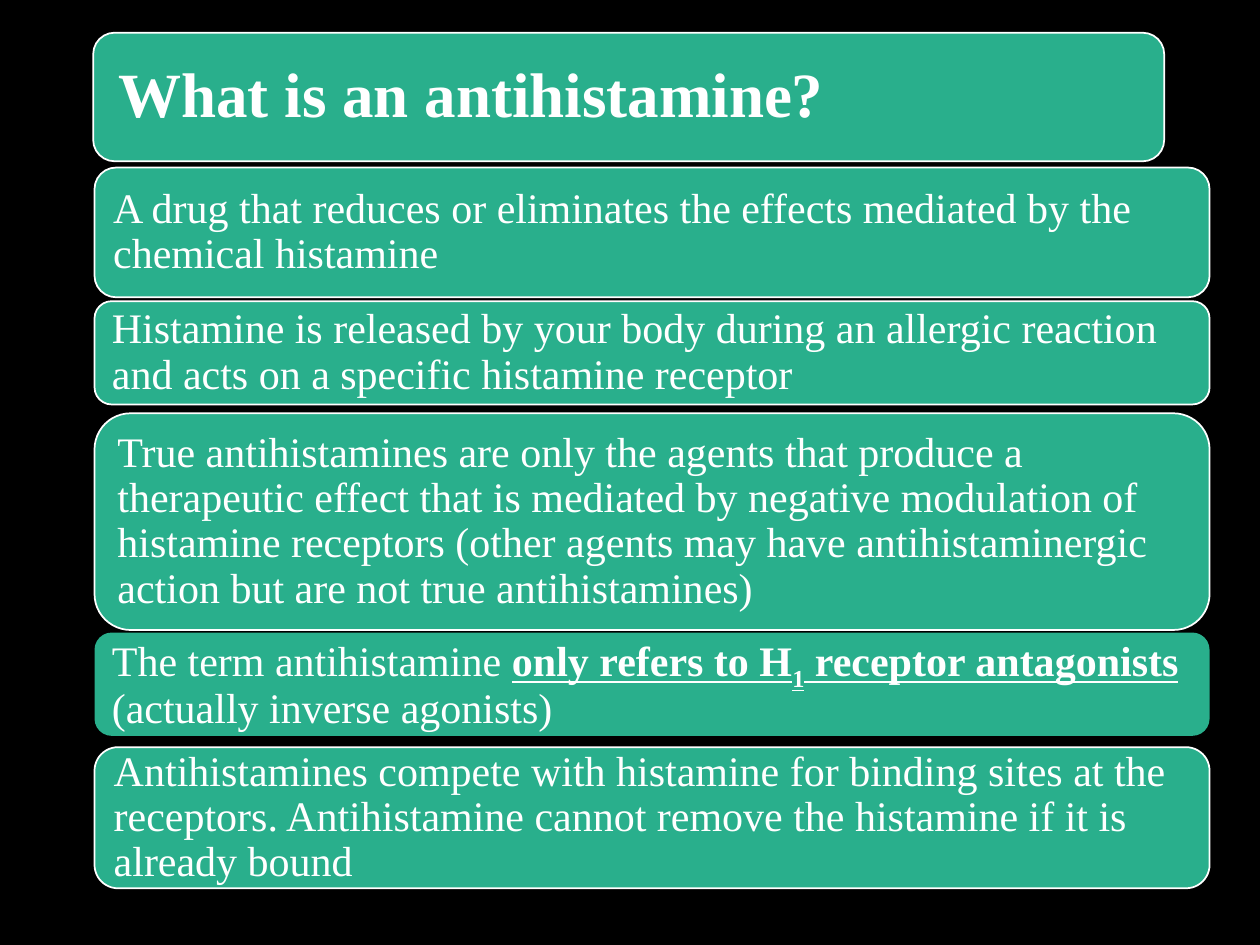
from pptx import Presentation
from pptx.dml.color import RGBColor
from pptx.enum.shapes import MSO_SHAPE
from pptx.enum.text import MSO_ANCHOR, MSO_AUTO_SIZE, PP_ALIGN
from pptx.util import Inches, Pt

ROUNDED = MSO_SHAPE.ROUNDED_RECTANGLE
MIDDLE = MSO_ANCHOR.MIDDLE
LEFT = PP_ALIGN.LEFT
NO_AUTOFIT = MSO_AUTO_SIZE.NONE

COLORS = {"background": "000000", "card": "29AF8C", "text": "FFFFFF", "outline": "FFFFFF"}
FONT = "Times New Roman"
TITLE_ONLY_LAYOUT = 5
CARD_LEFT, CARD_WIDTH = 0.75, 8.85

# Each card: top, height, outlined, runs of (text, styles)
CARDS = [
    (1.33, 1.03, True, [
        ("A drug that reduces or eliminates the effects mediated by the chemical histamine", ""),
    ]),
    (2.39, 0.82, True, [
        ("Histamine is released by your body during an allergic reaction and acts on a "
         "specific histamine receptor", ""),
    ]),
    (3.28, 1.72, True, [
        ("True antihistamines are only the agents that produce a therapeutic effect that is "
         "mediated by negative modulation of histamine receptors (other agents may have "
         "antihistaminergic action but are not true antihistamines)", ""),
    ]),
    (5.02, 0.82, False, [
        ("The term antihistamine ", ""),
        ("only refers to H", "bold underline"),
        ("1", "bold underline subscript"),
        (" receptor antagonists", "bold underline"),
        (" (actually inverse agonists)", ""),
    ]),
    (5.93, 1.12, True, [
        ("Antihistamines compete with histamine for binding sites at the receptors. "
         "Antihistamine cannot remove the histamine if it is already bound", ""),
    ]),
]


def color(name):
    return RGBColor.from_string(COLORS[name])


def add_card(slide, left, top, width, height, outlined=True):
    card = slide.shapes.add_shape(
        ROUNDED, Inches(left), Inches(top), Inches(width), Inches(height))
    card.shadow.inherit = False
    card.fill.solid()
    card.fill.fore_color.rgb = color("card")
    if outlined:
        card.line.color.rgb = color("outline")
        card.line.width = Pt(1)
    else:
        card.line.fill.background()
    return card


def write_text(shape, runs, size, inset):
    frame = shape.text_frame
    frame.word_wrap = True
    frame.auto_size = NO_AUTOFIT
    frame.vertical_anchor = MIDDLE
    frame.margin_left = frame.margin_right = Inches(inset)
    frame.margin_top = frame.margin_bottom = Inches(inset)
    paragraph = frame.paragraphs[0]
    paragraph.alignment = LEFT
    paragraph.line_spacing = 0.9
    for text, styles in runs:
        run = paragraph.add_run()
        run.text = text
        run.font.name = FONT
        run.font.size = Pt(size)
        run.font.color.rgb = color("text")
        run.font.bold = "bold" in styles
        run.font.underline = "underline" in styles
        if "subscript" in styles:
            run._r.get_or_add_rPr().set("baseline", "-25000")


def add_title(slide):
    """Place the title placeholder on top of its own card."""
    card = add_card(slide, 0.74, 0.26, 8.5, 1.02)
    title = slide.shapes.title
    title.left, title.top = Inches(0.79), Inches(0.31)
    title.width, title.height = Inches(8.4), Inches(0.92)
    write_text(title, [("What is an antihistamine?", "bold")], 36, 0.15)
    card.element.addnext(title.element)


def main():
    presentation = Presentation()
    presentation.slide_width, presentation.slide_height = Inches(10), Inches(7.5)
    slide = presentation.slides.add_slide(presentation.slide_layouts[TITLE_ONLY_LAYOUT])
    slide.background.fill.solid()
    slide.background.fill.fore_color.rgb = color("background")
    add_title(slide)
    for top, height, outlined, runs in CARDS:
        card = add_card(slide, CARD_LEFT, top, CARD_WIDTH, height, outlined)
        write_text(card, runs, 24, 0.1)
    presentation.save("out.pptx")


if __name__ == "__main__":
    main()
